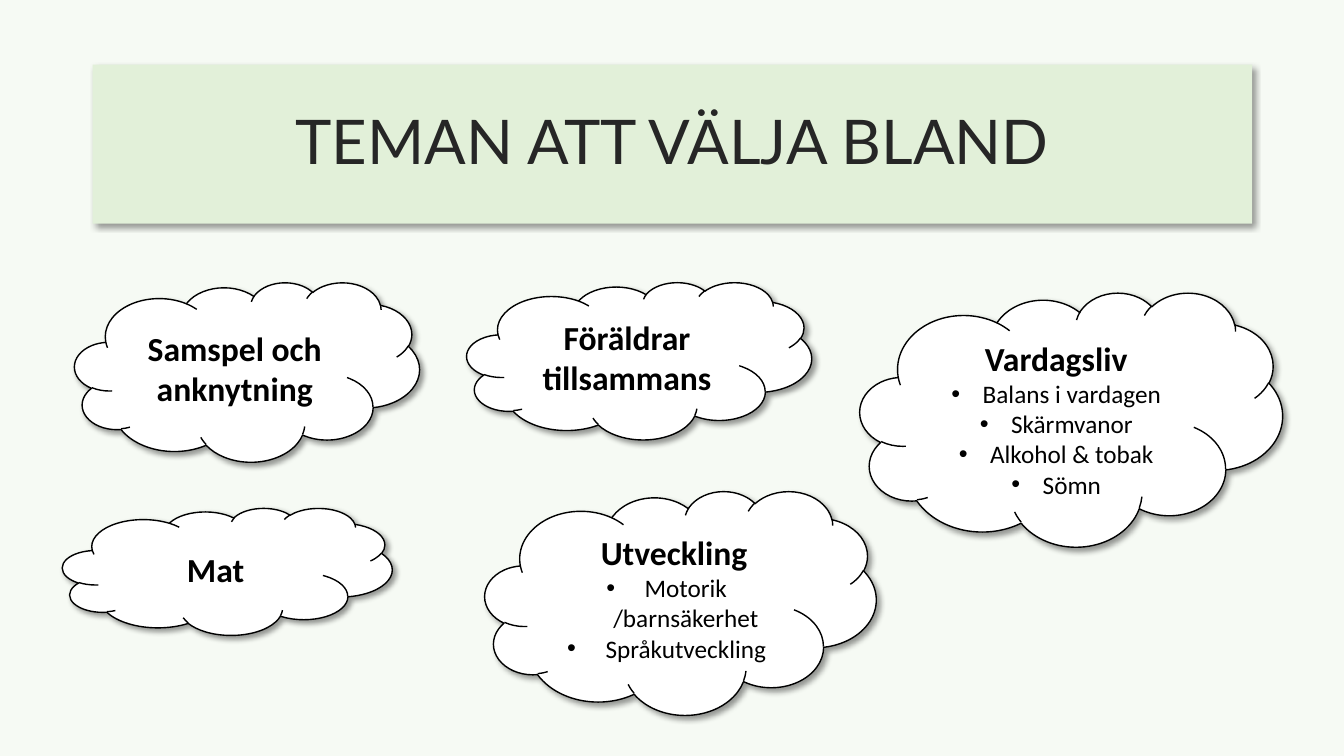
from pptx import Presentation
from pptx.dml.color import RGBColor
from pptx.enum.shapes import MSO_SHAPE
from pptx.enum.text import MSO_ANCHOR, PP_ALIGN
from pptx.oxml import parse_xml
from pptx.oxml.ns import nsdecls
from pptx.util import Inches, Pt

# Content
BACKGROUND, BANNER, INK = "F6FAF4", "E2F0D9", "000000"
TITLE = "TEMAN ATT VÄLJA BLAND"
TITLE_BOX = (0.92, 0.64, 11.5, 1.58)
THEMES = [
    dict(box=(4.81, 4.87, 3.88, 2.22), name="Utveckling", name_indent=0.15, indent=0.38,
         points=["Motorik /barnsäkerhet", "Språkutveckling"]),
    dict(box=(8.53, 2.9, 4.19, 2.52), name="Vardagsliv", top=0.15, indent=0.31,
         points=["Balans i vardagen", "Skärmvanor", "Alkohol & tobak", "Sömn"]),
    dict(box=(0.62, 5.04, 3.27, 1.26), name="Mat"),
    dict(box=(0.74, 2.8, 3.42, 1.78), name="Samspel och anknytning"),
    dict(box=(4.63, 2.8, 3.42, 1.56), name="Föräldrar tillsammans"),
]

# Text formats
TITLE_FONT = dict(name="Lato", size=Pt(44), bold=False)
NAME_FONT = dict(name="Calibri", size=Pt(24), bold=True)
POINT_FONT = dict(name="Calibri", size=Pt(18), bold=False)


def color(hex_value):
    return RGBColor.from_string(hex_value)


def add_shadow(sp):
    sp._element.spPr.append(parse_xml(
        f'<a:effectLst {nsdecls("a")}>'
        f'<a:outerShdw blurRad="{Pt(4)}" dist="{Pt(3)}" dir="2700000" algn="tl" rotWithShape="0">'
        '<a:srgbClr val="000000"><a:alpha val="40000"/></a:srgbClr>'
        '</a:outerShdw></a:effectLst>'))


def add_panel(s, kind, box, fill, line=None):
    sp = s.shapes.add_shape(kind, *map(Inches, box))
    sp.fill.solid()
    sp.fill.fore_color.rgb = color(fill)
    if line:
        sp.line.color.rgb = color(line)
        sp.line.width = Pt(1)
    else:
        sp.line.fill.background()
    add_shadow(sp)
    sp.text_frame.word_wrap = True
    sp.text_frame.vertical_anchor = MSO_ANCHOR.MIDDLE
    return sp


def write(p, text, font, ink=INK):
    p.alignment = PP_ALIGN.CENTER
    r = p.add_run()
    r.text = text
    for key, value in font.items():
        setattr(r.font, key, value)
    r.font.color.rgb = color(ink)


def add_bullet(p, indent):
    pPr = p._p.get_or_add_pPr()
    pPr.set("marL", str(Inches(indent)))
    pPr.set("indent", str(-Inches(indent)))
    for tag in ('buFont {} typeface="Arial"', 'buChar {} char="•"'):
        pPr.append(parse_xml(f'<a:{tag.format(nsdecls("a"))}/>'))


# Slide
prs = Presentation()
prs.slide_width, prs.slide_height = Inches(13.33), Inches(7.5)
s = prs.slides.add_slide(prs.slide_layouts[6])
s.background.fill.solid()
s.background.fill.fore_color.rgb = color(BACKGROUND)

# Title banner
banner = add_panel(s, MSO_SHAPE.RECTANGLE, TITLE_BOX, BANNER)
p = banner.text_frame.paragraphs[0]
p.line_spacing = 0.9
write(p, TITLE, TITLE_FONT, "262626")

# Theme clouds
for theme in THEMES:
    tf = add_panel(s, MSO_SHAPE.CLOUD, theme["box"], "FFFFFF", INK).text_frame
    tf.margin_top = Inches(theme.get("top", 0.05))
    p = tf.paragraphs[0]
    write(p, theme["name"], NAME_FONT)
    if "name_indent" in theme:
        p._p.get_or_add_pPr().set("marL", str(Inches(theme["name_indent"])))
    for point in theme.get("points", []):
        p = tf.add_paragraph()
        write(p, point, POINT_FONT)
        add_bullet(p, theme["indent"])

prs.save("out.pptx")
